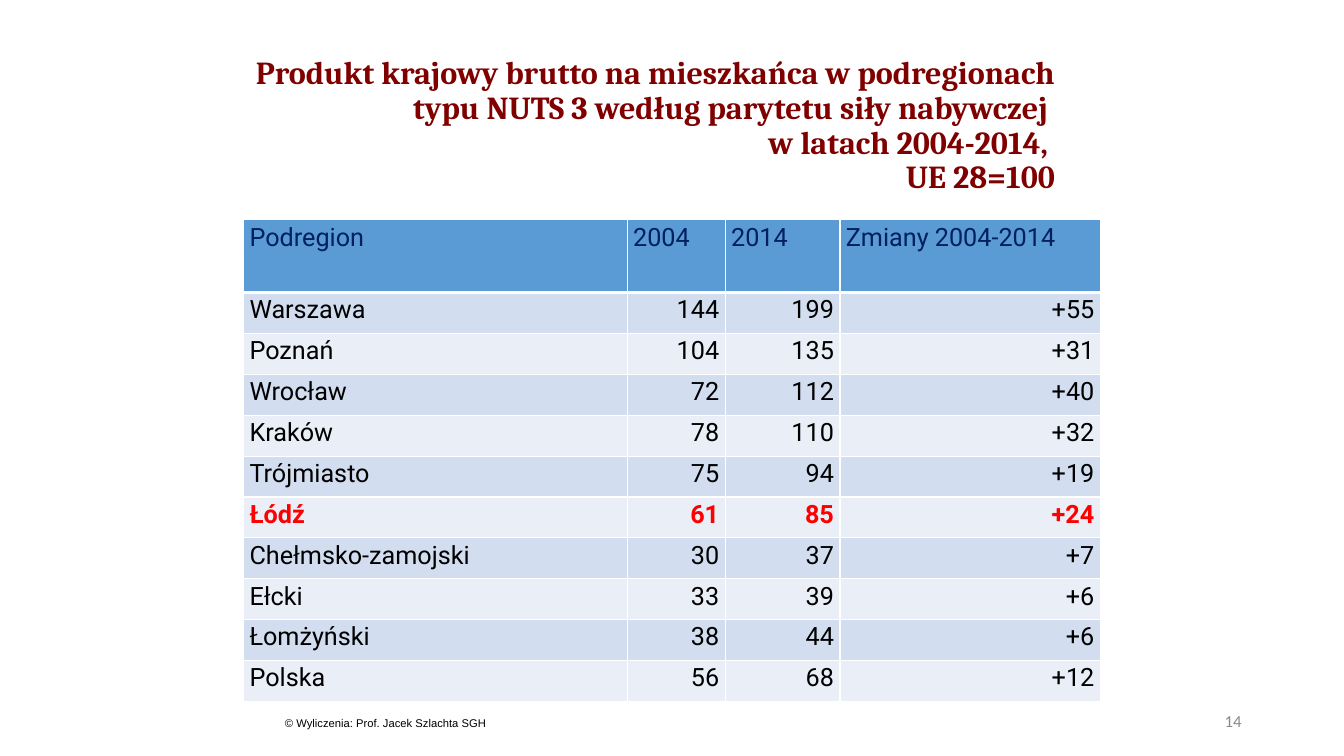
from dataclasses import dataclass

from lxml.etree import SubElement
from pptx import Presentation
from pptx.dml.color import RGBColor
from pptx.enum.text import MSO_ANCHOR, MSO_AUTO_SIZE, PP_ALIGN
from pptx.oxml.ns import qn
from pptx.util import Pt


@dataclass(frozen=True)
class Theme:
    maroon: str = "800000"
    navy: str = "002060"
    blue: str = "5B9BD5"
    bands: tuple = ("D2DEEF", "EAEFF7")
    white: str = "FFFFFF"
    black: str = "000000"
    red: str = "FF0000"
    gray: str = "898989"
    serif: str = "Cambria"
    body: str = "Roboto"
    plain: str = "Arial"
    folio: str = "Calibri"
    head: float = 22.9
    cell: float = 18
    page: float = 12
    note: float = 8


THEME = Theme()
TITLE = (
    "Produkt krajowy brutto na mieszkańca w podregionach typu NUTS 3 według parytetu siły nabywczej ",
    "w latach 2004-2014, ",
    "UE 28=100",
)
HEADS = ("Podregion", "2004", "2014", "Zmiany 2004-2014")
ROWS = (
    ("Warszawa", 144, 199),
    ("Poznań", 104, 135),
    ("Wrocław", 72, 112),
    ("Kraków", 78, 110),
    ("Trójmiasto", 75, 94),
    ("Łódź", 61, 85),
    ("Chełmsko-zamojski", 30, 37),
    ("Ełcki", 33, 39),
    ("Łomżyński", 38, 44),
    ("Polska", 56, 68),
)
FOCUS = "Łódź"
WIDTHS = (274, 70, 82, 186)
TOP_ROW = 52


def add_run(para, text, font, size, color, bold=False):
    run = para.add_run()
    run.text = text
    run.font.name = font
    run.font.size = Pt(size)
    run.font.color.rgb = RGBColor.from_string(color)
    run.font.bold = bold


def set_pad(item, side, edge):
    item.margin_left = item.margin_right = Pt(side)
    item.margin_top = item.margin_bottom = Pt(edge)


def add_box(slide, box, side=7.2, edge=3.6):
    frame = slide.shapes.add_textbox(*map(Pt, box)).text_frame
    frame.word_wrap = True
    frame.vertical_anchor = MSO_ANCHOR.MIDDLE
    set_pad(frame, side, edge)
    return frame


def add_title(slide, box):
    frame = add_box(slide, box, 5.2, 2.6)
    for i, text in enumerate(TITLE):
        para = frame.add_paragraph() if i else frame.paragraphs[0]
        para.alignment = PP_ALIGN.RIGHT
        para.line_spacing = 0.9
        add_run(para, text, THEME.serif, THEME.head, THEME.maroon, True)


def set_edge(cell, tag, width):
    line = SubElement(cell._tc.get_or_add_tcPr(), qn(tag), w=str(Pt(width)))
    fill = SubElement(line, qn("a:solidFill"))
    SubElement(fill, qn("a:srgbClr"), val=THEME.white)


def fill_cell(cell, text, fill, color, align, bold=False, base=1, top=1):
    set_pad(cell, 4.3, 2.2)
    for tag, width in (("a:lnL", 1), ("a:lnR", 1), ("a:lnT", top), ("a:lnB", base)):
        set_edge(cell, tag, width)
    cell.fill.solid()
    cell.fill.fore_color.rgb = RGBColor.from_string(fill)
    para = cell.text_frame.paragraphs[0]
    para.alignment = align
    add_run(para, text, THEME.body, THEME.cell, color, bold)


def add_grid(slide, box):
    table = slide.shapes.add_table(len(ROWS) + 1, len(HEADS), *map(Pt, box)).table
    for col, width in zip(table.columns, WIDTHS):
        col.width = Pt(box[2] * width / sum(WIDTHS))
    for i, row in enumerate(table.rows):
        row.height = Pt((box[3] - TOP_ROW) / len(ROWS) if i else TOP_ROW)
    for j, text in enumerate(HEADS):
        fill_cell(table.cell(0, j), text, THEME.blue, THEME.navy, PP_ALIGN.LEFT, base=3)
    for i, (name, old, new) in enumerate(ROWS):
        bold = name == FOCUS
        color = THEME.red if bold else THEME.black
        for j, text in enumerate((name, str(old), str(new), f"{new - old:+d}")):
            align = PP_ALIGN.RIGHT if j else PP_ALIGN.LEFT
            fill_cell(table.cell(i + 1, j), text, THEME.bands[i % 2], color, align,
                      bold, top=1 if i else 3)


def add_page(slide, box):
    para = add_box(slide, box).paragraphs[0]
    para.alignment = PP_ALIGN.RIGHT
    add_run(para, "14", THEME.folio, THEME.page, THEME.gray)


def add_note(slide, box):
    frame = add_box(slide, box)
    frame.word_wrap = False
    frame.auto_size = MSO_AUTO_SIZE.SHAPE_TO_FIT_TEXT
    frame.vertical_anchor = MSO_ANCHOR.TOP
    add_run(frame.paragraphs[0], "© Wyliczenia: Prof. Jacek Szlachta SGH",
            THEME.plain, THEME.note, THEME.black)


def main():
    deck = Presentation()
    deck.slide_width, deck.slide_height = Pt(960), Pt(540)
    slide = deck.slides.add_slide(deck.slide_layouts[6])
    add_title(slide, (173.5, 31.7, 585.4, 117.4))
    add_grid(slide, (174, 157, 612, 344))
    add_page(slide, (678, 500.5, 216, 28.8))
    add_note(slide, (196.5, 508.3, 164, 17))
    deck.save("out.pptx")


if __name__ == "__main__":
    main()
